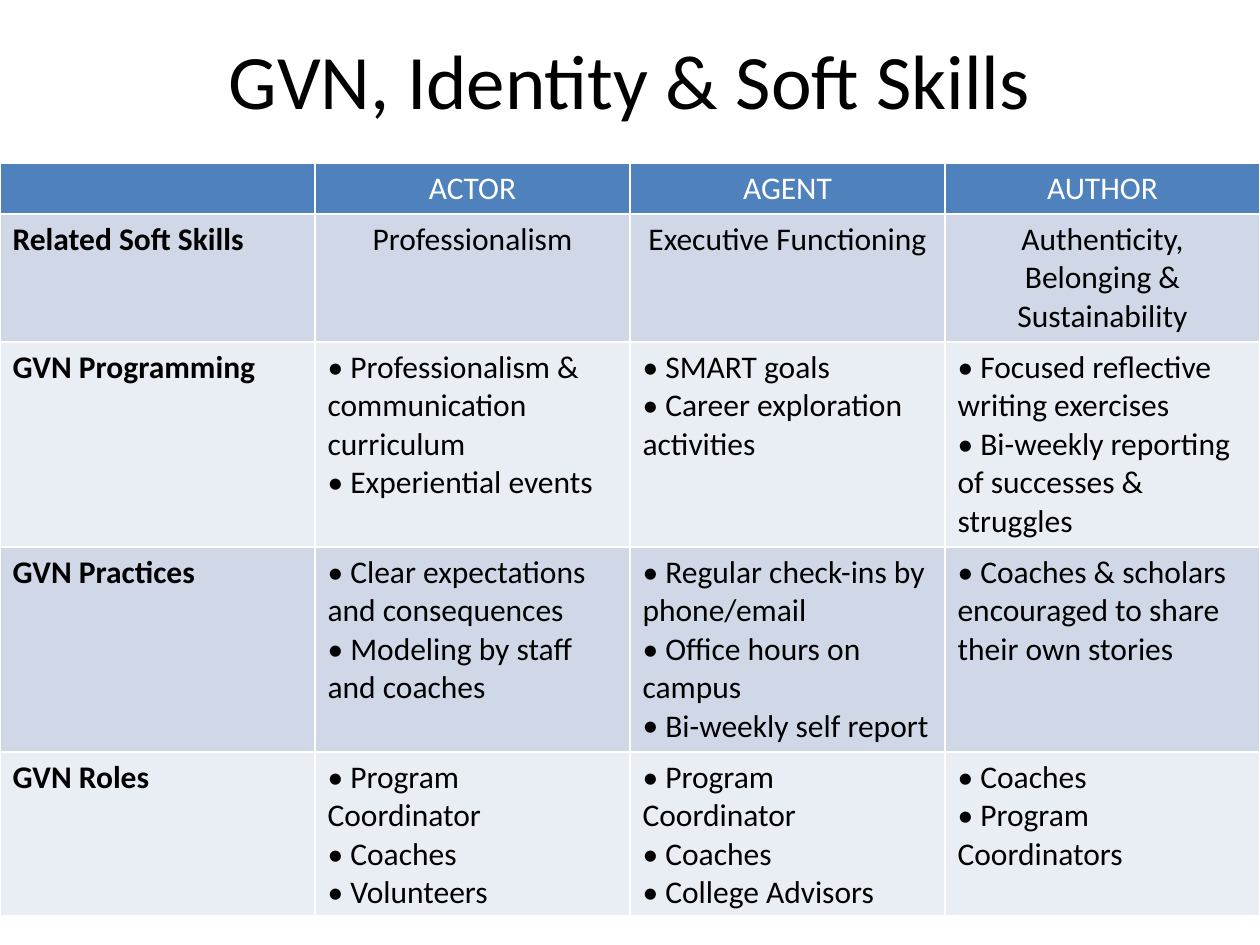
import pptx
import pptx.dml.color
import pptx.enum.text
import pptx.util
import lxml.etree
from dataclasses import dataclass


@dataclass(frozen=True)
class Theme:
    font: str = "Calibri"
    title_size: int = 44
    table_size: int = 18
    ink: str = "000000"
    header_ink: str = "FFFFFF"
    header_fill: str = "4F81BD"
    band_fills: tuple = ("E9EDF4", "D0D8E8")


THEME = Theme()
EMU_PER_PX = 914400 / 126
ALIGN = pptx.enum.text.PP_ALIGN


def px(length):
    return pptx.util.Emu(round(length * EMU_PER_PX))


def style(para, size, color, align, bold=False):
    para.alignment = align
    para.font.name = THEME.font
    para.font.size = pptx.util.Pt(size)
    para.font.bold = bold
    para.font.color.rgb = pptx.dml.color.RGBColor.from_string(color)


deck = pptx.Presentation()
deck.slide_width, deck.slide_height = px(1260), px(945)
page = deck.slides.add_slide(deck.slide_layouts[6])

title = page.shapes.add_textbox(px(63), px(0), px(1134), px(158)).text_frame
title.word_wrap = True
title.vertical_anchor = pptx.enum.text.MSO_ANCHOR.MIDDLE
title.text = "GVN, Identity & Soft Skills"
style(title.paragraphs[0], THEME.title_size, THEME.ink, ALIGN.CENTER)

# Each cell holds a list of paragraphs.
ROWS = [
    [[""], ["ACTOR"], ["AGENT"], ["AUTHOR"]],
    [["Related Soft Skills"], ["Professionalism"], ["Executive Functioning"],
     ["Authenticity, Belonging & Sustainability"]],
    [["GVN Programming"],
     ["Professionalism & communication curriculum", "Experiential events"],
     ["SMART goals", "Career exploration activities"],
     ["Focused reflective writing exercises",
      "Bi-weekly reporting of successes & struggles"]],
    [["GVN Practices"],
     ["Clear expectations and consequences", "Modeling by staff and coaches"],
     ["Regular check-ins by phone/email", "Office hours on campus",
      "Bi-weekly self report"],
     ["Coaches & scholars encouraged to share their own stories"]],
    [["GVN Roles"],
     ["Program Coordinator", "Coaches", "Volunteers"],
     ["Program Coordinator", "Coaches", "College Advisors"],
     ["Coaches", "Program Coordinators"]],
]
ROW_HEIGHTS = [51, 128, 205, 205, 128]
FIRST_BULLET_ROW = 2

# The default table style supplies the white cell borders.
table = page.shapes.add_table(len(ROWS), len(ROWS[0]), px(0), px(163),
                              px(1260), px(sum(ROW_HEIGHTS))).table

for row, (cells, height) in enumerate(zip(ROWS, ROW_HEIGHTS)):
    table.rows[row].height = px(height)
    header = row == 0
    fill = THEME.header_fill if header else THEME.band_fills[row % 2]
    ink = THEME.header_ink if header else THEME.ink
    for column, lines in enumerate(cells):
        cell = table.cell(row, column)
        cell.fill.solid()
        cell.fill.fore_color.rgb = pptx.dml.color.RGBColor.from_string(fill)
        label = column == 0
        bulleted = row >= FIRST_BULLET_ROW and not label
        align = ALIGN.LEFT if label or bulleted else ALIGN.CENTER
        # The bullets have no hanging indent, so a space parts them from the text.
        lead = " " if bulleted else ""
        cell.text = "\n".join(lead + line for line in lines)
        for para in cell.text_frame.paragraphs:
            if bulleted:
                properties = para._p.get_or_add_pPr()
                for tag, key, value in (("a:buFont", "typeface", THEME.font),
                                        ("a:buChar", "char", "•")):
                    lxml.etree.SubElement(properties,
                                          pptx.oxml.ns.qn(tag)).set(key, value)
            style(para, THEME.table_size, ink, align, bold=label)

deck.save("out.pptx")
